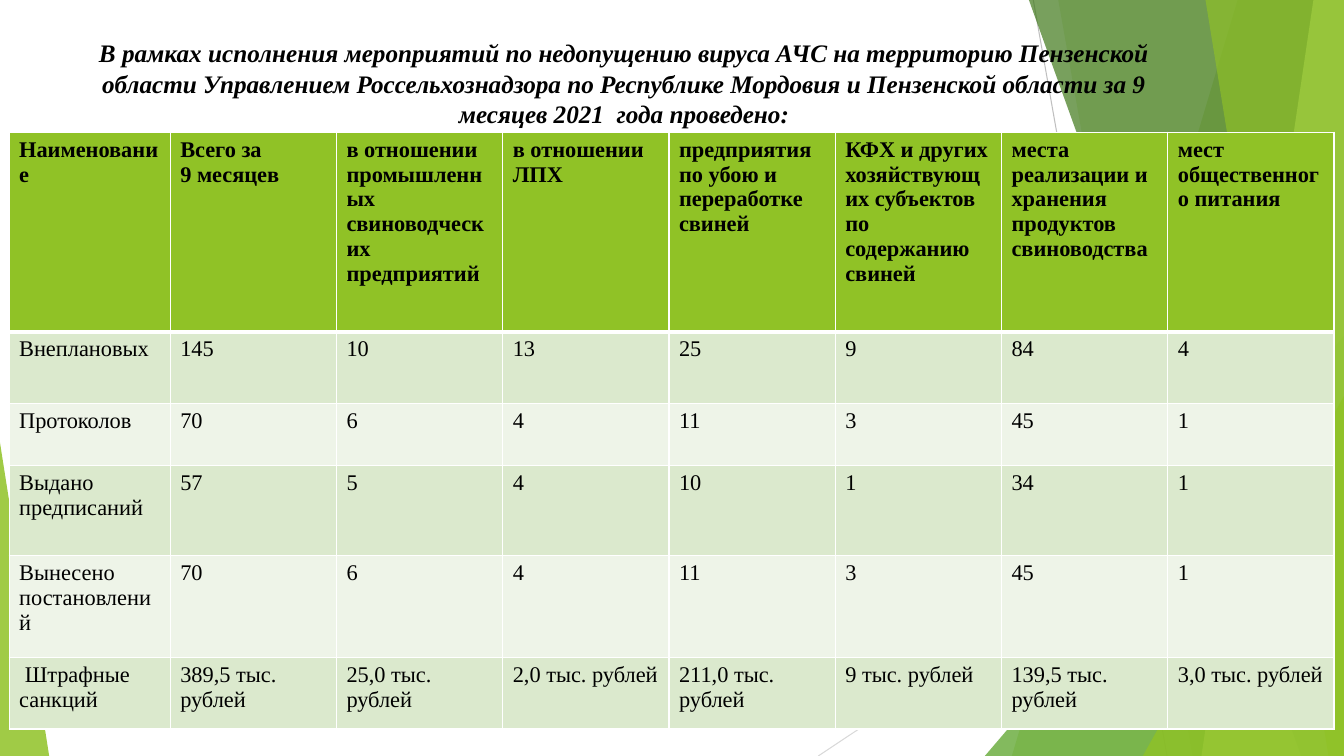
"""Build the slide about swine fever inspections over nine months of 2021."""
from typing import NamedTuple

from lxml import etree
from pptx import Presentation
from pptx import util as u
from pptx.dml.color import RGBColor
from pptx.enum import shapes, text
from pptx.oxml import ns

WHITE = RGBColor(0xFF, 0xFF, 0xFF)
BLACK = RGBColor(0x00, 0x00, 0x00)
GREEN = RGBColor(0x90, 0xC2, 0x26)
MID_GREEN = RGBColor(0x54, 0xA0, 0x21)
DARK_GREEN = RGBColor(0x3F, 0x78, 0x19)
LIME = RGBColor(0xC0, 0xE4, 0x74)
BAND_DARK = RGBColor(0xDB, 0xE9, 0xCD)
BAND_LIGHT = RGBColor(0xEE, 0xF4, 0xE8)
GRAY = RGBColor(0xBF, 0xBF, 0xBF)
LIGHT_GRAY = RGBColor(0xD9, 0xD9, 0xD9)

FONT = "Times New Roman"
WIDTH, HEIGHT = 33.87, 19.05
TITLE_TOP, TABLE_TOP = 0.82, 3.33


class Ray(NamedTuple):
    start: tuple[float, float]
    end: tuple[float, float]
    color: RGBColor


class Shard(NamedTuple):
    top_x: float
    bottom_x: float
    color: RGBColor
    opacity: int


class Corner(NamedTuple):
    left: float
    top: float
    width: float
    apex: float
    color: RGBColor
    opacity: int


RAYS = [
    Ray((26.04, 0), (29.41, HEIGHT), GRAY),
    Ray((WIDTH, 10.24), (20.62, HEIGHT), LIGHT_GRAY),
]
DECORATIONS = [
    Shard(31.19, 25.5, GREEN, 30),
    Shard(26.67, 30.05, GREEN, 20),
    Corner(24.82, 8.46, 9.05, 1, MID_GREEN, 72),
    Shard(25.93, 32.79, DARK_GREEN, 70),
    Shard(33.1, 30.28, LIME, 70),
    Shard(30.38, 33.48, GREEN, 65),
    Corner(28.8, 9.98, 5.07, 1, GREEN, 80),
    Corner(0, 11.15, 1.24, 0, GREEN, 85),
]

TITLE = (
    "В рамках исполнения мероприятий по недопущению вируса АЧС на территорию "
    "Пензенской области Управлением Россельхознадзора по Республике Мордовия "
    "и Пензенской области за 9 месяцев 2021  года проведено:"
)
COLUMN_WIDTHS = [4.06] + [4.19] * 7
ROW_HEIGHTS = [5.03, 1.8, 1.57, 2.27, 2.57, 1.8]
ROWS = [
    ["Наименование", "Всего за\n9 месяцев",
     "в отношении промышленных свиноводческих предприятий",
     "в отношении ЛПХ", "предприятия по убою и переработке свиней",
     "КФХ и других хозяйствующих субъектов по содержанию свиней",
     "места реализации и хранения продуктов свиноводства",
     "мест общественного питания"],
    ["Внеплановых", "145", "10", "13", "25", "9", "84", "4"],
    ["Протоколов", "70", "6", "4", "11", "3", "45", "1"],
    ["Выдано предписаний", "57", "5", "4", "10", "1", "34", "1"],
    ["Вынесено постановлений", "70", "6", "4", "11", "3", "45", "1"],
    [" Штрафные санкций", "389,5 тыс. рублей", "25,0 тыс. рублей",
     "2,0 тыс. рублей", "211,0 тыс. рублей", "9 тыс. рублей",
     "139,5 тыс. рублей", "3,0 тыс. рублей"],
]


def write_text(frame, content: str, *, size: float, bold: bool = False,
               italic: bool = False, align=text.PP_ALIGN.LEFT) -> None:
    frame.text = content
    for paragraph in frame.paragraphs:
        paragraph.alignment = align
        for run in paragraph.runs:
            run.font.name = FONT
            run.font.size = u.Pt(size)
            run.font.bold = bold
            run.font.italic = italic
            run.font.color.rgb = BLACK


def add_ray(slide, ray: Ray) -> None:
    connector = slide.shapes.add_connector(
        shapes.MSO_CONNECTOR.STRAIGHT, *map(u.Cm, ray.start + ray.end))
    connector.line.color.rgb = ray.color
    connector.line.width = u.Pt(0.75)
    etree.SubElement(connector.element.spPr, ns.qn("a:effectLst"))


def add_decoration(slide, item: Shard | Corner) -> None:
    if isinstance(item, Shard):
        builder = slide.shapes.build_freeform(u.Cm(item.top_x), 0)
        outline = [(WIDTH, 0), (WIDTH, HEIGHT), (item.bottom_x, HEIGHT)]
        builder.add_line_segments([(u.Cm(x), u.Cm(y)) for x, y in outline])
        shape = builder.convert_to_shape()
    else:
        shape = slide.shapes.add_shape(
            shapes.MSO_SHAPE.ISOSCELES_TRIANGLE, u.Cm(item.left), u.Cm(item.top),
            u.Cm(item.width), u.Cm(HEIGHT - item.top))
        shape.adjustments[0] = item.apex
    shape.shadow.inherit = False
    shape.line.fill.background()
    shape.fill.solid()
    shape.fill.fore_color.rgb = item.color
    color = shape.element.spPr.find(".//" + ns.qn("a:srgbClr"))
    etree.SubElement(color, ns.qn("a:alpha"), val=str(item.opacity * 1000))


def add_border(cell, side: str, points: float) -> None:
    properties = cell._tc.get_or_add_tcPr()
    line = etree.SubElement(properties, ns.qn(f"a:ln{side}"), w=str(u.Pt(points)))
    fill = etree.SubElement(line, ns.qn("a:solidFill"))
    etree.SubElement(fill, ns.qn("a:srgbClr"), val=str(WHITE))


def add_results_table(slide) -> None:
    table = slide.shapes.add_table(
        len(ROWS), len(COLUMN_WIDTHS), u.Cm(0.23), u.Cm(TABLE_TOP),
        u.Cm(sum(COLUMN_WIDTHS)), u.Cm(sum(ROW_HEIGHTS))).table
    for column, width in zip(table.columns, COLUMN_WIDTHS):
        column.width = u.Cm(width)
    for index, (row, height, contents) in enumerate(
            zip(table.rows, ROW_HEIGHTS, ROWS)):
        row.height = u.Cm(height)
        band = BAND_DARK if index % 2 else BAND_LIGHT
        for cell, content in zip(row.cells, contents):
            write_text(cell.text_frame, content, size=16, bold=index == 0)
            add_border(cell, "L", 1)
            add_border(cell, "R", 1)
            add_border(cell, "T", 3 if index == 1 else 1)
            add_border(cell, "B", 3 if index == 0 else 1)
            cell.fill.solid()
            cell.fill.fore_color.rgb = band if index else GREEN


def add_title(slide) -> None:
    title = slide.shapes.title
    title.left, title.top = u.Cm(1.22), u.Cm(TITLE_TOP)
    title.width, title.height = u.Cm(29.01), u.Cm(TABLE_TOP - TITLE_TOP)
    frame = title.text_frame
    frame.word_wrap = True
    frame.auto_size = text.MSO_AUTO_SIZE.NONE
    frame.vertical_anchor = text.MSO_ANCHOR.TOP
    frame.margin_bottom = 0
    write_text(frame, TITLE, size=18, bold=True, italic=True,
               align=text.PP_ALIGN.CENTER)
    slide.shapes.element.append(title.element)


def main() -> None:
    presentation = Presentation()
    presentation.slide_width = u.Cm(WIDTH)
    presentation.slide_height = u.Cm(HEIGHT)
    slide = presentation.slides.add_slide(presentation.slide_layouts[5])
    for ray in RAYS:
        add_ray(slide, ray)
    for item in DECORATIONS:
        add_decoration(slide, item)
    add_title(slide)
    add_results_table(slide)
    presentation.save("out.pptx")


if __name__ == "__main__":
    main()
